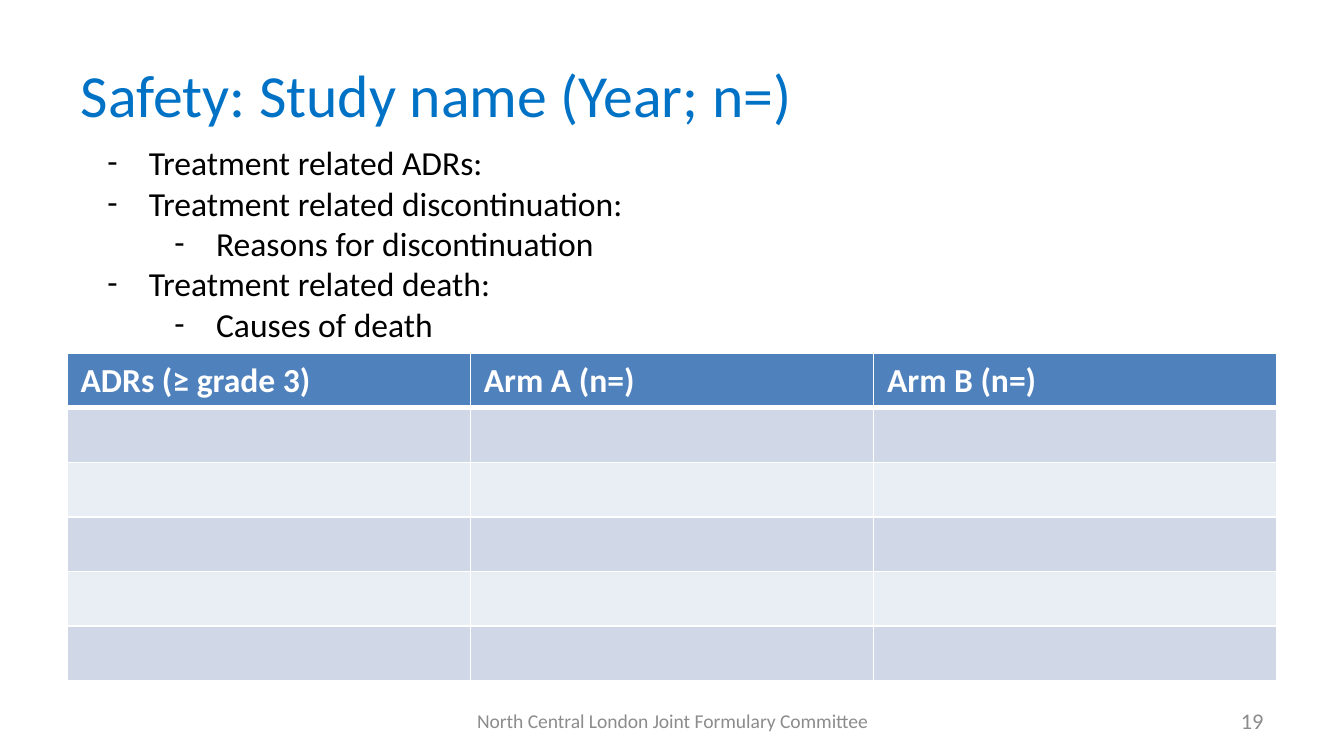
from lxml.etree import SubElement
from pptx import Presentation
from pptx.dml.color import RGBColor as RGB
from pptx.enum.text import MSO_ANCHOR as Anchor, MSO_AUTO_SIZE as Fit, PP_ALIGN as Align
from pptx.oxml.ns import qn
from pptx.util import Inches, Pt

TITLE = "Safety: Study name (Year; n=)"
POINTS = [
    (0, "Treatment related ADRs:"),
    (0, "Treatment related discontinuation:"),
    (1, "Reasons for discontinuation"),
    (0, "Treatment related death:"),
    (1, "Causes of death"),
]
HEADS = ["ADRs (≥ grade 3)", "Arm A (n=)", "Arm B (n=)"]
BLANKS = 5
FOOTER = "North Central London Joint Formulary Committee"
PAGE = "19"

THEME = {
    "font": "Calibri",
    "title": {"size": 32, "color": "0072C6"},
    "body": {"size": 18, "color": "000000"},
    "head": {"size": 18, "color": "FFFFFF", "bold": True},
    "foot": {"size": 10.5, "color": "8C8C8C"},
    "page": {"size": 12, "color": "8C8C8C"},
    "fills": {"head": "4F81BD", "bands": ["D0D8E8", "E9EDF4"]},
    "rule": "FFFFFF",
}
LEFT, WIDE = 0.5, 9
HANG, STEP = 0.31, 0.5


def write(para, text, style, align=Align.LEFT):
    para.alignment = align
    run = para.add_run()
    run.text = text
    look = THEME[style]
    values = {"name": THEME["font"], "size": Pt(look["size"]),
              "bold": look.get("bold", False)}
    for key, value in values.items():
        setattr(run.font, key, value)
    run.font.color.rgb = RGB.from_string(look["color"])


def add_box(slide, place, anchor):
    frame = slide.shapes.add_textbox(*map(Inches, place)).text_frame
    for key, value in {"word_wrap": True, "vertical_anchor": anchor}.items():
        setattr(frame, key, value)
    return frame


def add_dash(para, level):
    """Give the paragraph a dash bullet with a hanging indent."""
    para.level = level
    props = para._p.get_or_add_pPr()
    props.set("marL", str(Inches(HANG + STEP * level)))
    props.set("indent", str(-Inches(HANG)))
    SubElement(props, qn("a:buFont"), typeface=THEME["font"])
    SubElement(props, qn("a:buChar"), char="-")


def paint(cell, fill, widths):
    """Set the borders (points by side), then the fill."""
    props = cell._tc.get_or_add_tcPr()
    for side, width in widths.items():
        line = SubElement(props, qn(f"a:ln{side}"), w=str(Pt(width)))
        solid = SubElement(line, qn("a:solidFill"))
        SubElement(solid, qn("a:srgbClr"), val=THEME["rule"])
    cell.fill.solid()
    cell.fill.fore_color.rgb = RGB.from_string(fill)


def add_grid(slide):
    rows, cols = BLANKS + 1, len(HEADS)
    place = map(Inches, (LEFT, 2.63, WIDE, 2.43))
    table = slide.shapes.add_table(rows, cols, *place).table
    fills = THEME["fills"]
    for r in range(rows):
        fill = fills["bands"][(r - 1) % 2] if r else fills["head"]
        widths = {"L": 1, "R": 1, "T": 3 if r == 1 else 1, "B": 1 if r else 3}
        for c in range(cols):
            paint(table.cell(r, c), fill, widths)
    for c, head in enumerate(HEADS):
        write(table.cell(0, c).text_frame.paragraphs[0], head, "head")


def main():
    deck = Presentation()
    deck.slide_width = Inches(10)
    deck.slide_height = deck.slide_width * 9 // 16
    slide = deck.slides.add_slide(deck.slide_layouts[5])

    title = slide.shapes.title
    place = {"left": LEFT, "top": 0.23, "width": WIDE, "height": 0.94}
    for key, value in place.items():
        setattr(title, key, Inches(value))
    title.text_frame.vertical_anchor = Anchor.MIDDLE
    write(title.text_frame.paragraphs[0], TITLE, "title")

    add_grid(slide)

    foot = add_box(slide, (3.42, 5.21, 3.17, 0.3), Anchor.MIDDLE)
    write(foot.paragraphs[0], FOOTER, "foot", Align.CENTER)
    page = add_box(slide, (7.17, 5.21, 2.33, 0.3), Anchor.MIDDLE)
    write(page.paragraphs[0], PAGE, "page", Align.RIGHT)

    body = add_box(slide, (0.7, 1.01, 8.8, 1.62), Anchor.TOP)
    body.auto_size = Fit.SHAPE_TO_FIT_TEXT
    for i, (level, text) in enumerate(POINTS):
        para = body.add_paragraph() if i else body.paragraphs[0]
        add_dash(para, level)
        write(para, text, "body")

    deck.save("out.pptx")


if __name__ == "__main__":
    main()
